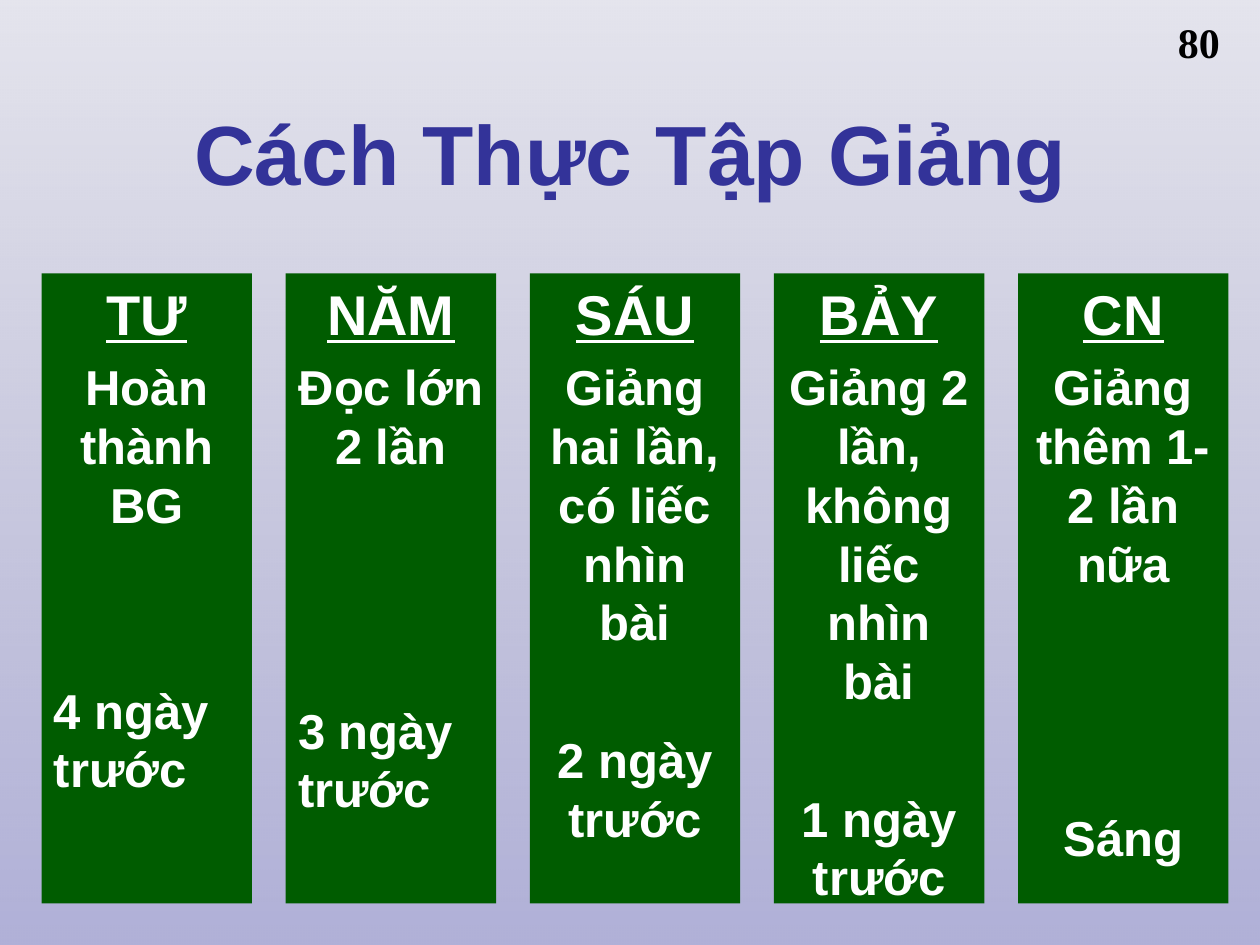
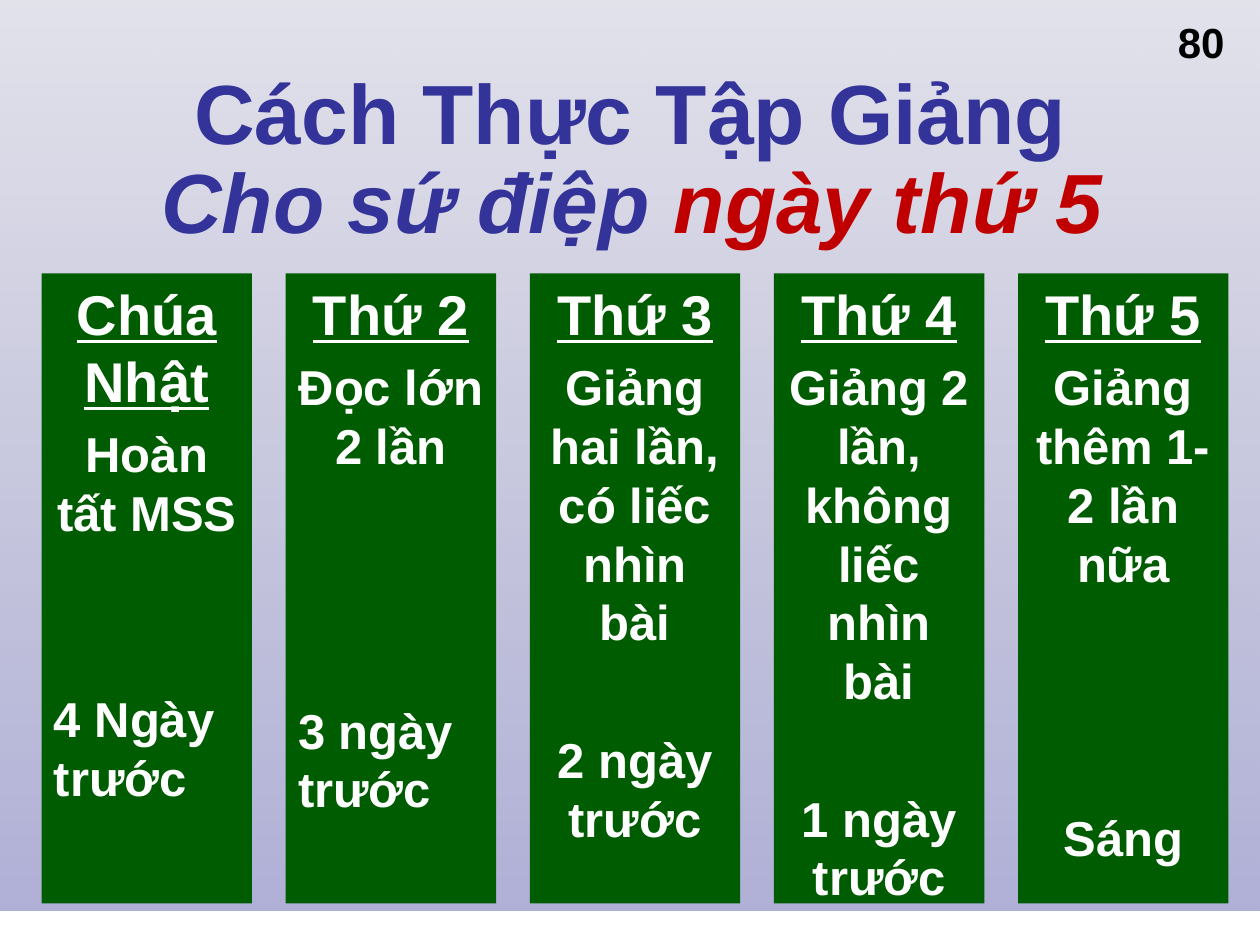
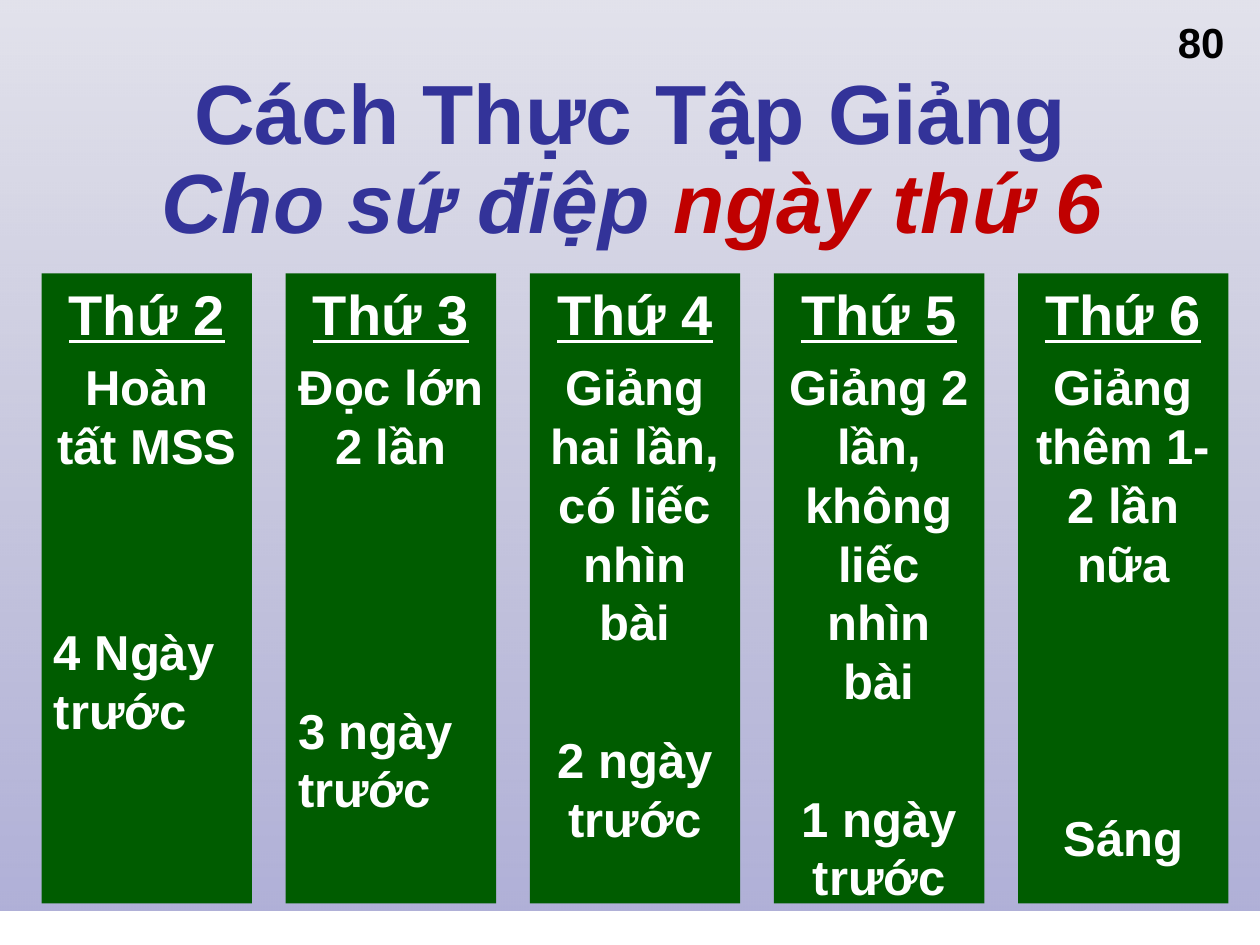
from lxml import etree
from pptx import Presentation
from pptx.dml.color import RGBColor
from pptx.enum.shapes import MSO_SHAPE
from pptx.enum.text import MSO_ANCHOR, PP_ALIGN
from pptx.oxml.ns import qn
from pptx.util import Inches, Pt

RECT = MSO_SHAPE.RECTANGLE
LEFT, CENTER = PP_ALIGN.LEFT, PP_ALIGN.CENTER
TOP, MIDDLE = MSO_ANCHOR.TOP, MSO_ANCHOR.MIDDLE

# Content
TITLE = "Cách Thực Tập Giảng"
SUBTITLE = "Cho sứ điệp "
PAGE = "80"
# Task, countdown, space above the countdown in points, countdown alignment
LATER_STEPS = [
    ("Đọc lớn 2 lần", "3 ngày trước", 129, LEFT),
    ("Giảng hai lần, có liếc nhìn bài", "2 ngày trước", 44.8, CENTER),
    ("Giảng 2 lần, không liếc nhìn bài", "1 ngày trước", 44.8, CENTER),
    ("Giảng thêm 1-2 lần nữa", "Sáng", 123, CENTER),
]
FIRST_GAP = 84
SCHEDULES = [
    {"days": ["TƯ", "NĂM", "SÁU", "BẢY", "CN"],
     "first": ("Hoàn thành BG", "4 ngày trước"),
     "target": None, "page_font": "Times New Roman"},
    {"days": ["Chúa Nhật", "Thứ 2", "Thứ 3", "Thứ 4", "Thứ 5"],
     "first": ("Hoàn tất MSS", "4 Ngày trước"),
     "target": "ngày thứ 5", "page_font": "Arial"},
    {"days": ["Thứ 2", "Thứ 3", "Thứ 4", "Thứ 5", "Thứ 6"],
     "first": ("Hoàn tất MSS", "4 Ngày trước"),
     "target": "ngày thứ 6", "page_font": "Arial"},
]

# Shared look
WIDTH, HEIGHT = 10, 7.5
FONT = "Arial"
NAVY, RED, GREEN = "333399", "C00000", "005C00"
WHITE, BLACK = "FFFFFF", "000000"
VEIL = [("24246D", 12), (NAVY, 39)]  # colour, opacity in percent
COLUMN_LEFT, COLUMN_TOP, COLUMN_WIDTH, COLUMN_HEIGHT = 0.33, 2.17, 1.67, 5
COLUMN_STEP = 7.75 / 4
VEIL_SHIFT = -0.27


def color(code):
    return RGBColor.from_string(code)


def inches(*lengths):
    return [Inches(length) for length in lengths]


def write(paragraph, text, size=28, ink=WHITE, font=FONT, align=CENTER,
          before=0, underline=False, italic=False):
    paragraph.alignment = align
    paragraph.space_before = Pt(before)
    run = paragraph.add_run()
    run.text = text
    run.font.name, run.font.size, run.font.bold = font, Pt(size), True
    run.font.underline, run.font.italic = underline, italic
    run.font.color.rgb = color(ink)


def text_box(slide, box, anchor=TOP, wrap=True):
    frame = slide.shapes.add_textbox(*inches(*box)).text_frame
    frame.word_wrap, frame.vertical_anchor = wrap, anchor
    return frame.paragraphs[0]


def panel(slide, box):
    shape = slide.shapes.add_shape(RECT, *inches(*box))
    shape.shadow.inherit = False
    shape.line.fill.background()
    return shape


def add_veil(slide, top):
    veil = panel(slide, (0, top, WIDTH, HEIGHT))
    veil.fill.gradient()
    veil.fill.gradient_angle = 270
    for stop, (tint, _) in zip(veil.fill.gradient_stops, VEIL):
        stop.color.rgb = color(tint)
    tints = veil.fill._xPr.iter(qn("a:srgbClr"))
    for tint, (_, opacity) in zip(list(tints), VEIL):
        etree.SubElement(tint, qn("a:alpha"), val=str(opacity * 1000))


def add_day(slide, index, day, task, countdown, gap, align):
    left = COLUMN_LEFT + index * COLUMN_STEP
    column = panel(slide, (left, COLUMN_TOP, COLUMN_WIDTH, COLUMN_HEIGHT))
    column.fill.solid()
    column.fill.fore_color.rgb = color(GREEN)
    frame = column.text_frame
    frame.word_wrap, frame.vertical_anchor = True, TOP
    write(frame.paragraphs[0], day, size=32, underline=True)
    write(frame.add_paragraph(), task, before=5.6)
    write(frame.add_paragraph(), countdown, before=gap, align=align)


def add_schedule(slide, days, first, target, page_font):
    add_veil(slide, VEIL_SHIFT if target else 0)

    # Headings
    title_box = (0.42, 0.36, 9.17, 1.04) if target else (0.42, 0.58, 9.17, 1.25)
    write(text_box(slide, title_box, MIDDLE), TITLE, size=48, ink=NAVY)
    if target:
        subtitle = text_box(slide, (0.43, 1.07, 9.17, 1.04), MIDDLE)
        write(subtitle, SUBTITLE, size=48, ink=NAVY, italic=True)
        write(subtitle, target, size=48, ink=RED, italic=True)

    # Day columns
    steps = [(*first, FIRST_GAP, LEFT)] + LATER_STEPS
    for index, (day, step) in enumerate(zip(days, steps)):
        add_day(slide, index, day, *step)

    # Page number
    page_width = 0.58 if page_font == FONT else 0.53
    page = text_box(slide, (9.25, 0.08, page_width, 0.5), wrap=False)
    write(page, PAGE, size=24, ink=BLACK, font=page_font, align=LEFT)


def main():
    deck = Presentation()
    deck.slide_width, deck.slide_height = inches(WIDTH, HEIGHT)
    blank = deck.slide_layouts[6]
    for schedule in SCHEDULES:
        add_schedule(deck.slides.add_slide(blank), **schedule)
    deck.save("out.pptx")


if __name__ == "__main__":
    main()
